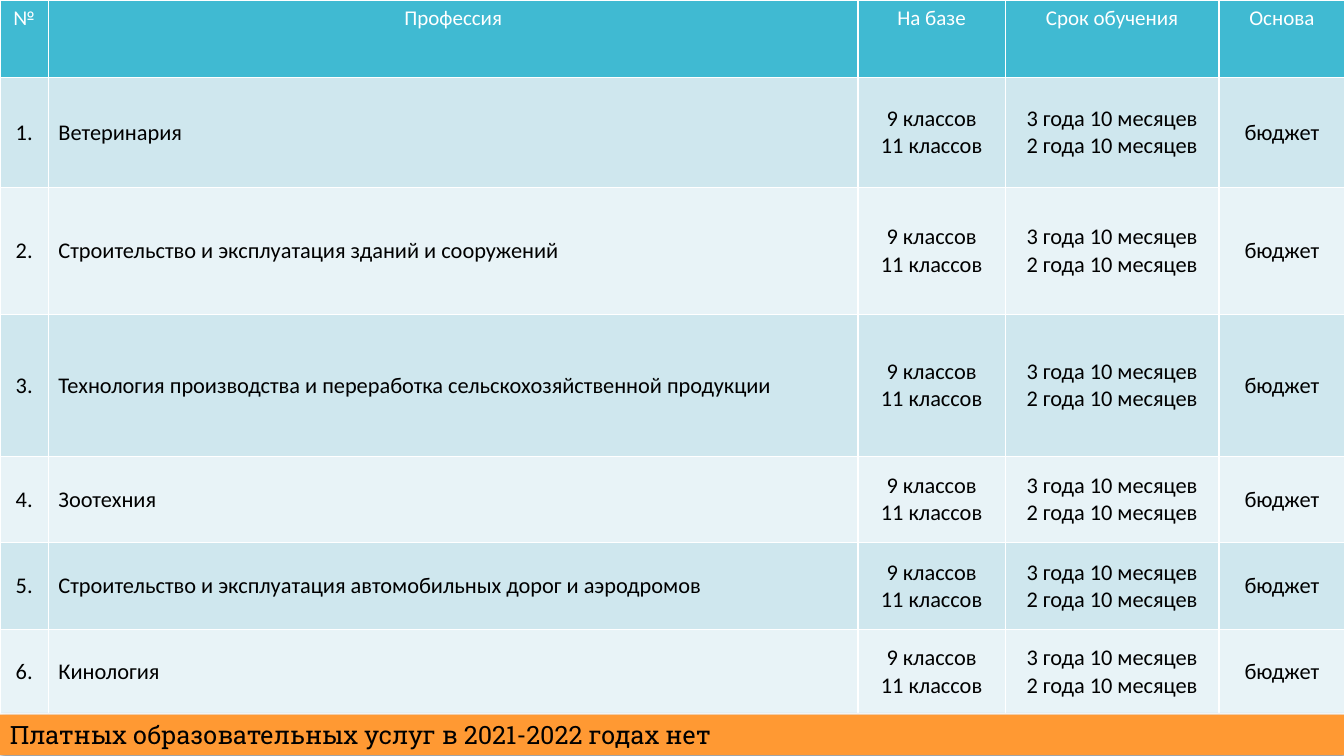
from lxml import etree
from pptx import Presentation
from pptx.dml.color import RGBColor
from pptx.enum import shapes, text
from pptx.oxml import ns
from pptx.util import Inches, Pt

WHITE = RGBColor(0xFF, 0xFF, 0xFF)
BLACK = RGBColor(0x00, 0x00, 0x00)
TEAL = RGBColor(0x40, 0xBA, 0xD2)
BANDS = [RGBColor(0xE8, 0xF3, 0xF7), RGBColor(0xCF, 0xE7, 0xEE)]
ORANGE = RGBColor(0xFF, 0x99, 0x33)

HEAD = ["№", "Профессия", "На базе", "Срок обучения", "Основа"]
TRADES = [
    "Ветеринария",
    "Строительство и эксплуатация зданий и сооружений",
    "Технология производства и переработка сельскохозяйственной продукции",
    "Зоотехния",
    "Строительство и эксплуатация автомобильных дорог и аэродромов",
    "Кинология",
]
TERMS = ["9 классов\n11 классов", "3 года 10 месяцев\n2 года 10 месяцев", "бюджет"]
WIDTHS = [0.48, 8.03, 1.46, 2.12, 1.25]
HEIGHTS = [0.77, 1.09, 1.26, 1.41, 0.85, 0.87, 0.83]


def style(par, **look):
    color = look.pop("color")
    for key, value in look.items():
        setattr(par.font, key, value)
    par.font.color.rgb = color


prs = Presentation()
prs.slide_width, prs.slide_height = Inches(13.33), Inches(7.5)
slide = prs.slides.add_slide(prs.slide_layouts[6])

# Table of trades
rows = [HEAD] + [[f"{n}.", trade] + TERMS for n, trade in enumerate(TRADES, 1)]
table = slide.shapes.add_table(
    len(rows), len(HEAD), 0, 0, Inches(13.33), Inches(7.09)).table
table.horz_banding = False
for col, width in zip(table.columns, WIDTHS):
    col.width = Inches(width)
for row, height in zip(table.rows, HEIGHTS):
    row.height = Inches(height)

for r, row in enumerate(rows):
    for c, words in enumerate(row):
        cell = table.cell(r, c)
        cell.text = words
        cell.fill.solid()
        cell.fill.fore_color.rgb = BANDS[r % 2] if r else TEAL
        cell.vertical_anchor = text.MSO_ANCHOR.MIDDLE if r else text.MSO_ANCHOR.TOP
        for par in cell.text_frame.paragraphs:
            left = r and c == 1
            par.alignment = text.PP_ALIGN.LEFT if left else text.PP_ALIGN.CENTER
            style(par, name="Calibri", size=Pt(16 if r else 15), bold=False,
                  color=BLACK if r else WHITE)

# Notice bar with a soft shadow
bar = slide.shapes.add_shape(
    shapes.MSO_SHAPE.RECTANGLE, 0, Inches(7.09), Inches(13.33), Inches(0.4))
bar.fill.solid()
bar.fill.fore_color.rgb = ORANGE
bar.line.fill.background()
bar.shadow.inherit = False
glow = etree.SubElement(
    bar.element.spPr.find(ns.qn("a:effectLst")), ns.qn("a:outerShdw"),
    blurRad=str(Pt(3.5)), dist=str(Pt(1.1)), dir="5400000", rotWithShape="0")
tint = etree.SubElement(glow, ns.qn("a:srgbClr"), val=str(BLACK))
etree.SubElement(tint, ns.qn("a:alpha"), val="45000")

frame = bar.text_frame
frame.word_wrap = True
frame.auto_size = text.MSO_AUTO_SIZE.SHAPE_TO_FIT_TEXT
frame.vertical_anchor = text.MSO_ANCHOR.TOP
frame.text = "Платных образовательных услуг в 2021-2022 годах нет"
note = frame.paragraphs[0]
note.alignment = text.PP_ALIGN.JUSTIFY
style(note, name="Roboto Slab", size=Pt(18), color=BLACK)

prs.save("out.pptx")
